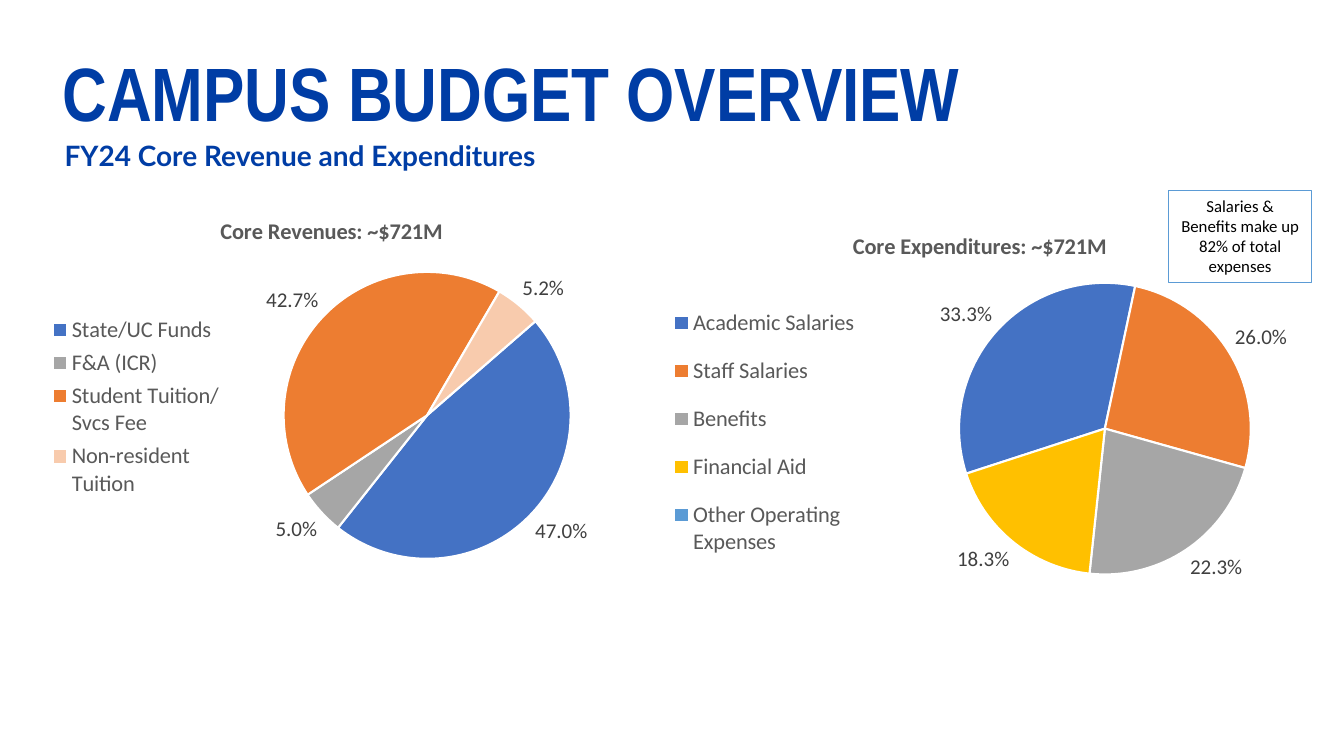
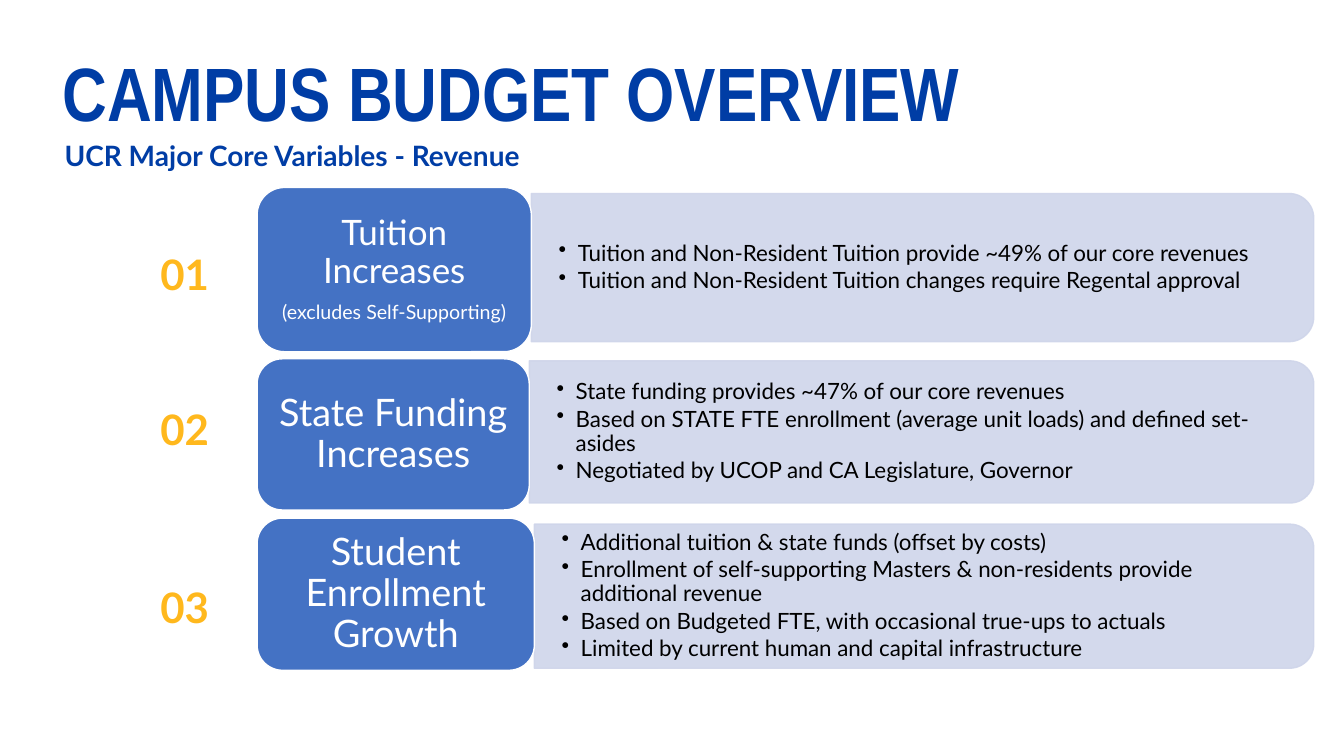
from dataclasses import dataclass
from typing import NamedTuple

from lxml import etree
from pptx import Presentation
from pptx.chart.data import CategoryChartData
from pptx.dml.color import RGBColor
from pptx.enum.chart import XL_CHART_TYPE, XL_LABEL_POSITION, XL_LEGEND_POSITION
from pptx.enum.shapes import MSO_SHAPE
from pptx.enum.text import MSO_ANCHOR, MSO_AUTO_SIZE, PP_ALIGN
from pptx.oxml.ns import qn
from pptx.util import Pt

PIE = XL_CHART_TYPE.PIE
OUTSIDE = XL_LABEL_POSITION.OUTSIDE_END
LEGEND_LEFT = XL_LEGEND_POSITION.LEFT
RECTANGLE = MSO_SHAPE.RECTANGLE
ROUNDED = MSO_SHAPE.ROUNDED_RECTANGLE
TOP_ROUNDED = MSO_SHAPE.ROUND_2_SAME_RECTANGLE
TOP, MIDDLE = MSO_ANCHOR.TOP, MSO_ANCHOR.MIDDLE
LEFT, CENTER = PP_ALIGN.LEFT, PP_ALIGN.CENTER
FIXED_SIZE = MSO_AUTO_SIZE.NONE

EMU_PER_PX = 9144
PANEL_RIGHT = 1303
CARD_LEFT = 255


@dataclass(frozen=True)
class Theme:
    heading: str = "Arial Narrow"
    text: str = "Lato"
    chart: str = "Calibri"
    navy: str = "003DA5"
    gold: str = "FFB81D"
    blue: str = "4472C4"
    orange: str = "ED7D31"
    gray: str = "A6A6A6"
    yellow: str = "FFC000"
    sky: str = "5B9BD5"
    peach: str = "F8CBAD"
    panel: str = "CFD5EA"
    white: str = "FFFFFF"
    black: str = "000000"
    legend: str = "595959"
    label: str = "404040"
    title_size: int = 54
    subtitle_size: int = 20
    number_size: int = 30
    list_size: int = 16
    caption_size: int = 14
    note_size: int = 12
    chart_size: int = 10
    legend_size: int = 16
    label_size: int = 15


THEME = Theme()


class Pie(NamedTuple):
    bounds: tuple
    title: str
    slices: list
    start_angle: int
    percent: bool
    layouts: dict


class Variable(NamedTuple):
    number: str
    number_top: int
    card: tuple
    panel: tuple
    heading: list
    points: list


PIES = [
    Pie((649, 205, 643, 408), "Core Expenditures: ~$721M", [
        ("Academic Salaries", 0.333, THEME.blue),
        ("Staff Salaries", 0.26, THEME.orange),
        ("Benefits", 0.223, THEME.gray),
        ("Financial Aid", 0.183, THEME.yellow),
        ("Other Operating Expenses", 0, THEME.sky),
    ], 252, False, {
        "title": (0.3, 0.05),
        "plotArea": (0.47, 0.18, 0.45, 0.72),
        "legend": (0.02, 0.2, 0.3, 0.7),
    }),
    Pie((32, 189, 589, 425), "Core Revenues: ~$721M", [
        ("State/UC Funds", 47, THEME.blue),
        ("F&A (ICR)", 5, THEME.gray),
        ("Student Tuition/ Svcs Fee", 42.7, THEME.orange),
        ("Non-resident Tuition", 5.2, THEME.peach),
    ], 49, True, {
        "title": (0.31, 0.05),
        "plotArea": (0.42, 0.19, 0.49, 0.67),
        "legend": (0.02, 0.28, 0.31, 0.45),
    }),
]

VARIABLES = [
    Variable("01", 247, (186, 272, 163), (192, 147),
             [("Tuition Increases", 25),
              ("(excludes Self-Supporting)", THEME.caption_size)],
             ["Tuition and Non-Resident Tuition provide ~49% of our core revenues",
              "Tuition and Non-Resident Tuition changes require Regental approval"]),
    Variable("02", 400, (356, 270, 150), (358, 141),
             [("State Funding Increases", 27)],
             ["State funding provides ~47% of our core revenues",
              "Based on STATE FTE enrollment (average unit loads) and defined set-asides",
              "Negotiated by UCOP and CA Legislature, Governor"]),
    Variable("03", 577, (514, 275, 151), (520, 143),
             [("Student Enrollment Growth", 27)],
             ["Additional tuition & state funds (offset by costs)",
              "Enrollment of self-supporting Masters & non-residents provide additional revenue",
              "Based on Budgeted FTE, with occasional true-ups to actuals",
              "Limited by current human and capital infrastructure"]),
]


def px(value):
    return round(value * EMU_PER_PX)


def scaled(bounds):
    return [px(value) for value in bounds]


def assign(target, values):
    for name, value in values.items():
        setattr(target, name, value)


def style_font(font, face, size, color, bold=False):
    assign(font, {"name": face, "size": Pt(size), "bold": bold})
    font.color.rgb = RGBColor.from_string(color)


def set_frame(frame, side=0, edge=0, anchor=TOP):
    assign(frame, {
        "word_wrap": True, "auto_size": FIXED_SIZE, "vertical_anchor": anchor,
        "margin_left": px(side), "margin_right": px(side),
        "margin_top": px(edge), "margin_bottom": px(edge),
    })


def set_bullet(para, char=None, indent=0):
    properties = para._p.get_or_add_pPr()
    properties.set("marL", str(px(indent)))
    properties.set("indent", str(-px(indent)))
    if char:
        etree.SubElement(properties, qn("a:buChar")).set("char", char)
    else:
        etree.SubElement(properties, qn("a:buNone"))


def write(frame, lines, face, color, bold=False, align=LEFT, spacing=1.0,
          after=0.0, bullet=None, indent=0):
    for index, (text, size) in enumerate(lines):
        para = frame.add_paragraph() if index else frame.paragraphs[0]
        set_bullet(para, bullet, indent)
        assign(para, {"alignment": align, "line_spacing": spacing,
                      "space_before": Pt(0), "space_after": Pt(size * after)})
        span = para.add_run()
        span.text = text
        style_font(span.font, face, size, color, bold)


def add_text(page, bounds, lines, side=0, edge=0, anchor=TOP, **style):
    box = page.shapes.add_textbox(*scaled(bounds))
    set_frame(box.text_frame, side, edge, anchor)
    write(box.text_frame, lines, **style)


def add_block(page, kind, bounds, fill, line):
    block = page.shapes.add_shape(kind, *scaled(bounds))
    block.shadow.inherit = False
    block.fill.solid()
    block.fill.fore_color.rgb = RGBColor.from_string(fill)
    block.line.color.rgb = RGBColor.from_string(line)
    block.line.width = Pt(1)
    return block


def add_page(deck, subtitle):
    page = deck.slides.add_slide(deck.slide_layouts[1])
    title, body = page.placeholders
    for holder, bounds in ((title, (52, 51, 959, 113)), (body, (64, 137, 864, 34))):
        assign(holder, dict(zip(("left", "top", "width", "height"), scaled(bounds))))
    set_frame(title.text_frame, 10, 5)
    write(title.text_frame, [("CAMPUS BUDGET OVERVIEW", THEME.title_size)],
          THEME.heading, THEME.navy, bold=True, spacing=0.9)
    set_frame(body.text_frame)
    write(body.text_frame, [(subtitle, THEME.subtitle_size)],
          THEME.text, THEME.navy, bold=True)
    return page


def place_part(chart, tag, bounds):
    part = chart.element.find(".//" + qn("c:" + tag))
    for old in part.findall(qn("c:layout")):
        part.remove(old)
    layout = etree.Element(qn("c:layout"))
    manual = etree.SubElement(layout, qn("c:manualLayout"))
    values = {"layoutTarget": "inner"} if tag == "plotArea" else {}
    values.update(xMode="edge", yMode="edge")
    values.update(zip("xywh", bounds))
    for name, value in values.items():
        etree.SubElement(manual, qn("c:" + name)).set("val", str(value))
    part.insert(0 if tag == "plotArea" else 1, layout)


def add_pie(page, pie):
    names, values, colors = zip(*pie.slices)
    data = CategoryChartData()
    data.categories = names
    data.add_series("Series 1", values)
    chart = page.shapes.add_chart(PIE, *scaled(pie.bounds), data).chart
    style_font(chart.font, THEME.chart, THEME.chart_size, THEME.black)
    write(chart.chart_title.text_frame, [(pie.title, THEME.legend_size)],
          THEME.chart, THEME.legend, bold=True, align=CENTER)
    chart.has_legend = True
    assign(chart.legend, {"position": LEGEND_LEFT, "include_in_layout": False})
    style_font(chart.legend.font, THEME.chart, THEME.legend_size, THEME.legend)

    plot = chart.plots[0]
    assign(plot, {"vary_by_categories": True, "has_data_labels": True})
    labels = plot.data_labels
    assign(labels, {
        "show_percentage": pie.percent, "show_value": not pie.percent,
        "number_format": "0.0%", "number_format_is_linked": False,
        "position": OUTSIDE,
    })
    style_font(labels.font, THEME.chart, THEME.label_size, THEME.label)
    for index, color in enumerate(colors):
        wedge = plot.series[0].points[index].format
        wedge.fill.solid()
        wedge.fill.fore_color.rgb = RGBColor.from_string(color)
        wedge.line.color.rgb = RGBColor.from_string(THEME.white)
        wedge.line.width = Pt(1.5)
    pie_element = chart.element.find(".//" + qn("c:pieChart"))
    for old in pie_element.findall(qn("c:firstSliceAng")):
        pie_element.remove(old)
    etree.SubElement(pie_element, qn("c:firstSliceAng")).set("val", str(pie.start_angle))
    for tag, bounds in pie.layouts.items():
        place_part(chart, tag, bounds)


def add_panel(page, left, top, width, height, points):
    bounds = (left + (width - height) / 2, top + (height - width) / 2, height, width)
    panel = add_block(page, TOP_ROUNDED, bounds, THEME.panel, THEME.panel)
    panel.rotation = 90
    for color in panel._element.spPr.iter(qn("a:srgbClr")):
        etree.SubElement(color, qn("a:alpha")).set("val", "90000")
    add_text(page, (left, top + 7, width - 7, height - 14),
             [(point, THEME.list_size) for point in points],
             side=27, edge=14, anchor=MIDDLE, face=THEME.text, color=THEME.black,
             spacing=0.9, after=0.15, bullet="•", indent=19)


def add_variable(page, variable):
    add_text(page, (159, variable.number_top, 62, 50),
             [(variable.number, THEME.number_size)],
             face=THEME.text, color=THEME.gold, bold=True)
    card_top, card_width, card_height = variable.card
    panel_top, panel_height = variable.panel
    panel_left = CARD_LEFT + card_width
    add_panel(page, panel_left, panel_top, PANEL_RIGHT - panel_left, panel_height,
              variable.points)
    card = add_block(page, ROUNDED, (CARD_LEFT, card_top, card_width, card_height),
                     THEME.blue, THEME.white)
    set_frame(card.text_frame, 11, 6, MIDDLE)
    write(card.text_frame, variable.heading, THEME.text, THEME.white,
          align=CENTER, spacing=0.9, after=0.35)


def add_note(page, bounds, text):
    note = add_block(page, RECTANGLE, bounds, THEME.white, THEME.sky)
    set_frame(note.text_frame, 10, 5, TOP)
    write(note.text_frame, [(text, THEME.note_size)], THEME.chart, THEME.black,
          align=CENTER)


def main():
    deck = Presentation()
    assign(deck, {"slide_width": px(1333), "slide_height": px(750)})

    page = add_page(deck, "FY24 Core Revenue and Expenditures")
    add_note(page, (1159, 189, 142, 91),
             "Salaries & Benefits make up 82% of total expenses")
    for pie in PIES:
        add_pie(page, pie)

    page = add_page(deck, "UCR Major Core Variables - Revenue")
    for variable in VARIABLES:
        add_variable(page, variable)

    deck.save("out.pptx")


if __name__ == "__main__":
    main()
